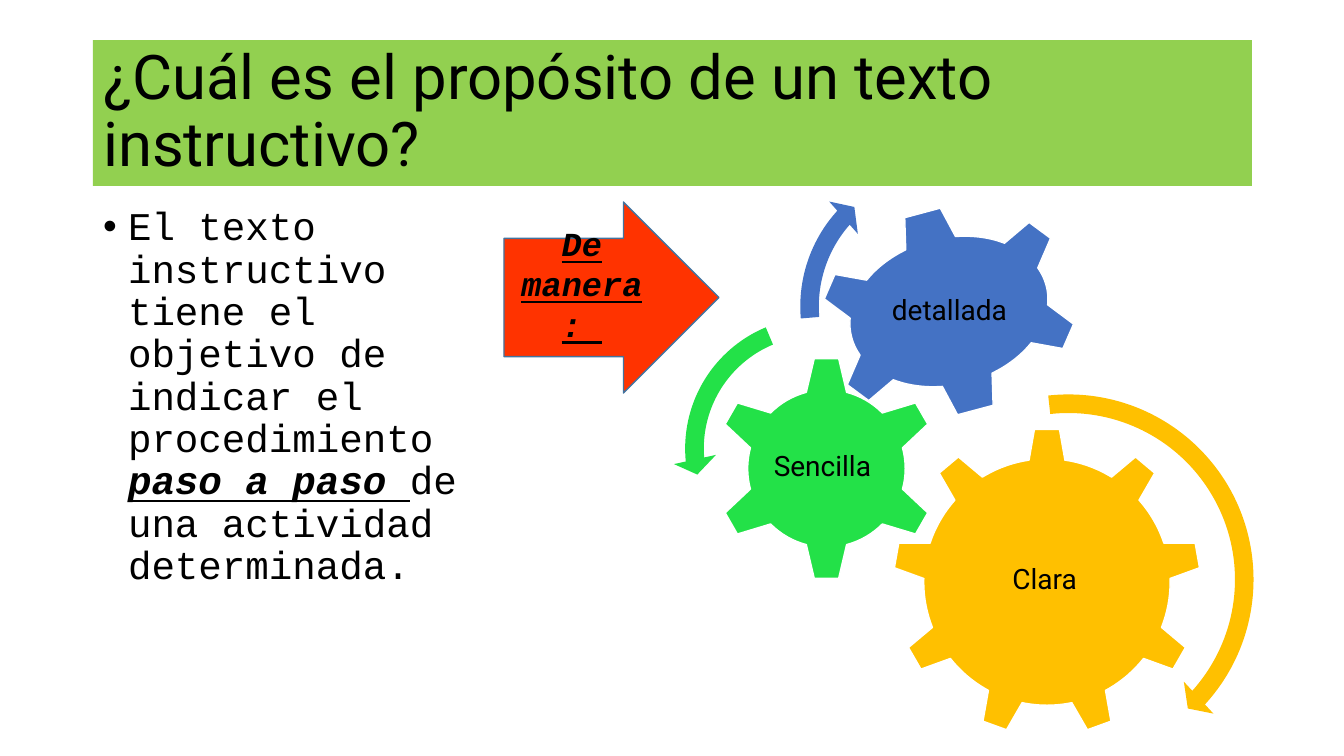
from pptx import Presentation
from pptx.dml.color import RGBColor
from pptx.enum.shapes import MSO_SHAPE as Geo
from pptx.enum.text import MSO_ANCHOR as Anchor, MSO_AUTO_SIZE as Auto, PP_ALIGN as Align
from pptx.oxml.ns import qn
from pptx.util import Emu, Pt
from lxml.etree import SubElement

SCALE = 914400 / 100.8
SANS, MONO = "Roboto", "Courier New"
BLACK, WHITE = "000000", "FFFFFF"
GOLD, GREEN, BLUE = "FFC000", "23E148", "4472C4"

GEARS = [
    (Geo.GEAR_9, (220, 276, 308, 308), 0, GOLD, "Clara ", (283, 349, 184, 159)),
    (Geo.GEAR_6, (41, 204, 225, 225), 0, GREEN, "Sencilla ", (97, 260, 112, 111)),
    (Geo.GEAR_6, (144, 55, 264, 209), 345, BLUE, "detallada", (206, 97, 141, 124)),
]
CURVES = [
    (Geo.CIRCULAR_ARROW, (198, 230, 395, 395), GOLD,
     (0.047, 2.99, 25.342, 158.23, 0.055)),
    (Geo.LEFT_CIRCULAR_ARROW, (0, 153, 287, 287), GREEN,
     (0.065, 4.3, 104.891, 148.378, 0.075)),
    (Geo.CIRCULAR_ARROW, (115, 0, 309, 309), BLUE,
     (0.06, 3.941, 133.138, 105.082, 0.07)),
]


def px(n):
    """Turn pixels into EMU."""
    return Emu(round(n * SCALE))


def hue(code):
    """Turn a hex string into a colour."""
    return RGBColor.from_string(code)


def paint(shape, fill, line=None):
    """Set a shape's fill and line and drop its shadow."""
    shape.shadow.inherit = False
    shape.fill.solid()
    shape.fill.fore_color.rgb = hue(fill)
    if line:
        shape.line.color.rgb = hue(line)
        shape.line.width = Pt(1)
    else:
        shape.line.fill.background()


def place(shape, box):
    """Move a shape into a box."""
    shape.left, shape.top, shape.width, shape.height = map(px, box)


def shift(box, part):
    """Place a part relative to the corner of a box."""
    return (box[0] + part[0], box[1] + part[1], *part[2:])


def frame(shape, anchor):
    """Prepare a wrapping text frame and return it."""
    text = shape.text_frame
    text.word_wrap = True
    text.auto_size = Auto.NONE
    text.vertical_anchor = anchor
    return text


def write(para, words, size, face, strong=False):
    """Add one run to a paragraph."""
    run = para.add_run()
    run.text = words
    font = run.font
    font.size, font.name = Pt(size), face
    font.color.rgb = hue(BLACK)
    font.bold = font.italic = font.underline = strong


def head(slide, box):
    """Fill the title bar."""
    title = slide.shapes.title
    place(title, box)
    title.fill.solid()
    title.fill.fore_color.rgb = hue("92D050")
    para = frame(title, Anchor.MIDDLE).paragraphs[0]
    para.alignment = Align.LEFT
    para.line_spacing = 0.9
    write(para, "¿Cuál es el propósito de un texto instructivo?", 44, SANS)


def body(slide, box):
    """Fill the bulleted statement."""
    holder = slide.placeholders[1]
    place(holder, box)
    para = frame(holder, Anchor.TOP).paragraphs[0]
    para.line_spacing = 0.9
    para.space_before = Pt(0)
    props = para._p.get_or_add_pPr()
    props.set("marL", str(px(25)))
    props.set("indent", str(-px(25)))
    SubElement(props, qn("a:buFont"), typeface="Arial")
    SubElement(props, qn("a:buChar"), char="•")
    write(para, "El texto instructivo tiene el objetivo de indicar el procedimiento ", 28, MONO)
    write(para, "paso a paso ", 28, MONO, True)
    write(para, "de una actividad determinada.", 28, MONO)


def arrow(slide, box):
    """Draw the arrow that leads to the gears."""
    shape = slide.shapes.add_shape(Geo.RIGHT_ARROW, *map(px, box))
    shape.adjustments[0] = 0.619
    paint(shape, "FF3300", "43739E")
    text = frame(shape, Anchor.MIDDLE)
    text.margin_bottom = px(33)
    para = text.paragraphs[0]
    para.alignment = Align.CENTER
    write(para, "De manera: ", 24, MONO, True)


def label(shapes, words, box):
    """Write a centred gear label."""
    text = frame(shapes.add_textbox(*map(px, box)), Anchor.MIDDLE)
    text.margin_left = text.margin_right = px(3)
    text.margin_top = text.margin_bottom = px(3)
    para = text.paragraphs[0]
    para.alignment = Align.CENTER
    para.line_spacing = 0.9
    write(para, words, 20, SANS)


def gears(slide, box):
    """Draw the three gears and their turning arrows."""
    shapes = slide.shapes.add_group_shape().shapes
    for kind, part, turn, fill, words, area in GEARS:
        gear = shapes.add_shape(kind, *map(px, shift(box, part)))
        gear.rotation = turn
        paint(gear, fill, WHITE)
        label(shapes, words, shift(box, area))
    for kind, part, fill, bends in CURVES:
        curve = shapes.add_shape(kind, *map(px, shift(box, part)))
        for i, bend in enumerate(bends):
            curve.adjustments[i] = bend
        paint(curve, fill)


def main():
    """Build and save the slide."""
    deck = Presentation()
    deck.slide_width, deck.slide_height = px(1344), px(756)
    slide = deck.slides.add_slide(deck.slide_layouts[1])
    head(slide, (93, 40, 1159, 146))
    body(slide, (93, 202, 379, 479))
    gears(slide, (673, 152))
    arrow(slide, (504, 202, 215, 191))
    deck.save("out.pptx")


if __name__ == "__main__":
    main()
